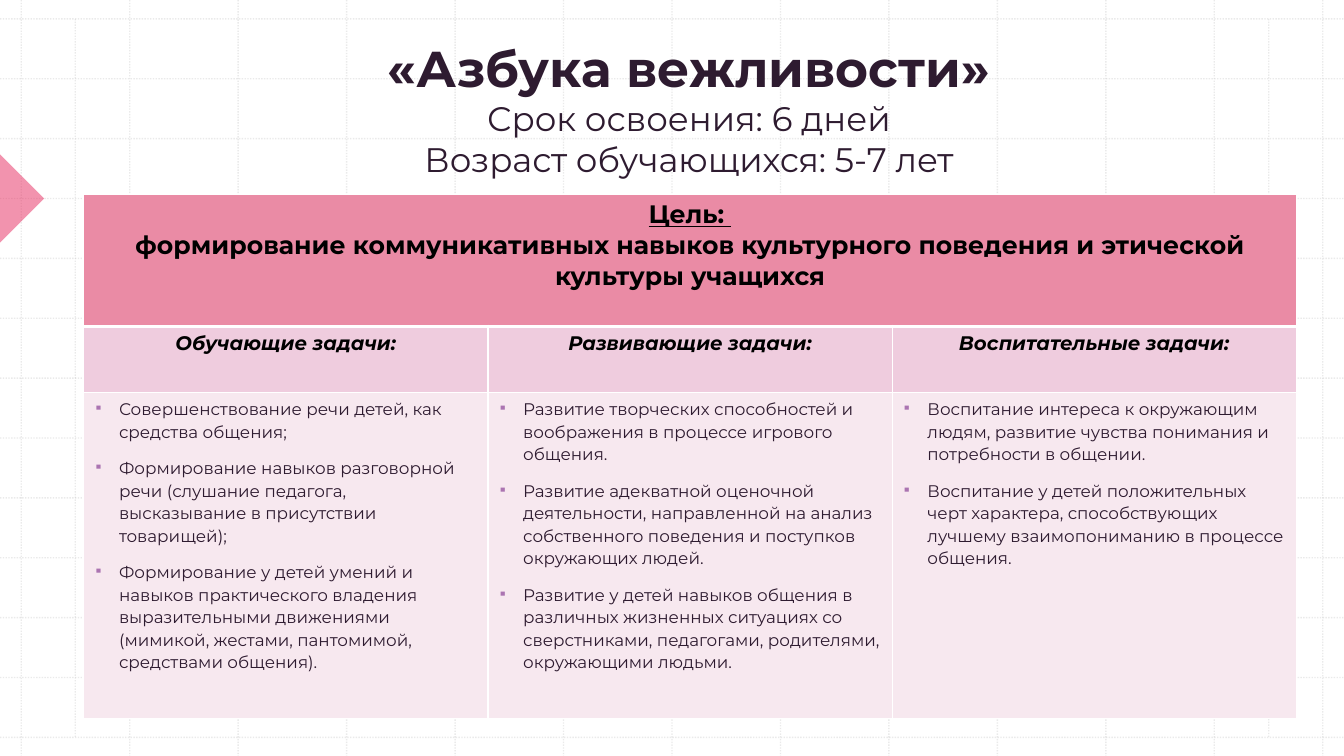
from dataclasses import dataclass

from lxml import etree
from pptx import Presentation
from pptx.dml.color import RGBColor
from pptx.enum.dml import MSO_LINE
from pptx.enum.shapes import MSO_CONNECTOR, MSO_SHAPE
from pptx.enum.text import MSO_ANCHOR, MSO_AUTO_SIZE, PP_ALIGN
from pptx.oxml.ns import qn
from pptx.util import Inches, Pt

WIDTH, HEIGHT = Inches(13.33), Inches(7.5)
DOTS = MSO_LINE.ROUND_DOT
STRAIGHT = MSO_CONNECTOR.STRAIGHT
WEDGE = MSO_SHAPE.RIGHT_TRIANGLE
TOP = MSO_ANCHOR.TOP
FIXED = MSO_AUTO_SIZE.NONE
CENTER, LEFT = PP_ALIGN.CENTER, PP_ALIGN.LEFT


@dataclass(frozen=True)
class Theme:
    face: str = "Montserrat"
    ink: str = "2E1B30"
    black: str = "000000"
    white: str = "FFFFFF"
    grid: str = "BCBCBC"
    wedge: str = "E7295E"
    goal: str = "EA8BA5"
    head: str = "EFCCDE"
    body: str = "F7E8EF"
    mark: str = "AB74B1"
    title: float = 36
    lead: float = 24.3
    large: float = 18
    medium: float = 14
    small: float = 12


@dataclass(frozen=True)
class Box:
    left: float
    top: float
    width: float
    height: float

    def place(self) -> tuple[int, int, int, int]:
        return wide(self.left), high(self.top), wide(self.width), high(self.height)


@dataclass(frozen=True)
class Line:
    text: str
    size: float
    color: str
    bold: bool = False
    slant: bool = False
    under: bool = False
    align: PP_ALIGN = CENTER
    bullet: bool = False


@dataclass(frozen=True)
class Column:
    head: str
    tasks: tuple[str, ...]


THEME = Theme()
TITLE = Box(6.75, 4.93, 89.03, 36.53)
TABLE = Box(6.23, 25.73, 90.23, 69.34)
ARROW = Box(-2.33, 22.13, 4.65, 8.27)
ROWS = (17.47, 8.67, 43.2)
COUNT = 13
RULES = [1.58 + 8.07 * i for i in range(COUNT)]
LEVELS = [2.5 + 7.92 * i for i in range(COUNT)]
MARGINS = (5.6, 94.4)

HEADING = (
    Line("«Азбука вежливости»", THEME.title, THEME.ink, bold=True),
    Line("Срок освоения: 6 дней", THEME.lead, THEME.ink),
    Line("Возраст обучающихся: 5-7 лет", THEME.lead, THEME.ink),
)
GOAL = (
    Line("Цель: ", THEME.large, THEME.black, bold=True, under=True),
    Line("формирование коммуникативных навыков культурного поведения и этической культуры учащихся",
         THEME.large, THEME.black, bold=True),
)
COLUMNS = (
    Column("Обучающие задачи:", (
        "Совершенствование речи детей, как средства общения;",
        "Формирование навыков разговорной речи (слушание педагога, высказывание в присутствии товарищей);",
        "Формирование у детей умений и навыков практического владения выразительными движениями "
        "(мимикой, жестами, пантомимой, средствами общения).",
    )),
    Column("Развивающие задачи:", (
        "Развитие творческих способностей и воображения в процессе игрового общения.",
        "Развитие адекватной оценочной деятельности, направленной на анализ собственного поведения "
        "и поступков окружающих людей.",
        "Развитие у детей навыков общения в различных жизненных ситуациях со сверстниками, "
        "педагогами, родителями, окружающими людьми.",
    )),
    Column("Воспитательные задачи:", (
        "Воспитание интереса к окружающим людям, развитие чувства понимания и потребности в общении.",
        "Воспитание у детей положительных черт характера, способствующих лучшему взаимопониманию "
        "в процессе общения.",
    )),
)


def wide(share: float) -> int:
    return round(WIDTH * share / 100)


def high(share: float) -> int:
    return round(HEIGHT * share / 100)


def rgb(color: str) -> RGBColor:
    return RGBColor.from_string(color)


def fade(props, share: int) -> None:
    for color in props.iter(qn("a:srgbClr")):
        etree.SubElement(color, qn("a:alpha"), val=str(share * 1000))


def rule(slide, x1: float, y1: float, x2: float, y2: float) -> None:
    link = slide.shapes.add_connector(STRAIGHT, wide(x1), high(y1), wide(x2), high(y2))
    link.line.color.rgb = rgb(THEME.grid)
    link.line.width = Pt(1)
    link.line.dash_style = DOTS
    props = link.element.spPr
    fade(props, 30)
    etree.SubElement(props, qn("a:effectLst"))


def mark(para) -> None:
    props = para._p.get_or_add_pPr()
    props.set("marL", str(Inches(0.25)))
    props.set("indent", str(-Inches(0.25)))
    color = etree.SubElement(props, qn("a:buClr"))
    etree.SubElement(color, qn("a:srgbClr"), val=THEME.mark)
    etree.SubElement(props, qn("a:buSzPct"), val="75000")
    etree.SubElement(props, qn("a:buChar"), char="▪")
    para.line_spacing = 1.1
    para.space_before = Pt(10)


def write(frame, lines: tuple[Line, ...]) -> None:
    for i, line in enumerate(lines):
        para = frame.add_paragraph() if i else frame.paragraphs[0]
        para.text = line.text
        para.alignment = line.align
        if line.bullet:
            mark(para)
        font = para.font
        font.name, font.size = THEME.face, Pt(line.size)
        font.bold, font.italic, font.underline = line.bold, line.slant, line.under
        font.color.rgb = rgb(line.color)


def edge(cell, side: str, width: float) -> None:
    props = cell._tc.get_or_add_tcPr()
    line = etree.SubElement(props, qn(f"a:ln{side}"), w=str(Pt(width)))
    fill = etree.SubElement(line, qn("a:solidFill"))
    etree.SubElement(fill, qn("a:srgbClr"), val=THEME.white)


def paint(table) -> None:
    for r, color in enumerate((THEME.goal, THEME.head, THEME.body)):
        for cell in table.rows[r].cells:
            sides = {"L": 1, "R": 1, "T": 3 if r == 1 else 1, "B": 3 if r == 0 else 1}
            for side, width in sides.items():
                edge(cell, side, width)
            cell.fill.solid()
            cell.fill.fore_color.rgb = rgb(color)


def chart(slide) -> None:
    table = slide.shapes.add_table(len(ROWS), len(COLUMNS), *TABLE.place()).table
    for row, share in zip(table.rows, ROWS):
        row.height = high(share)
    paint(table)
    table.cell(0, 0).merge(table.cell(0, len(COLUMNS) - 1))
    write(table.cell(0, 0).text_frame, GOAL)
    for c, column in enumerate(COLUMNS):
        head = Line(column.head, THEME.medium, THEME.black, bold=True, slant=True)
        tasks = tuple(Line(task, THEME.small, THEME.ink, align=LEFT, bullet=True)
                      for task in column.tasks)
        write(table.cell(1, c).text_frame, (head,))
        write(table.cell(2, c).text_frame, tasks)


def back(slide) -> None:
    for x in RULES:
        rule(slide, x, 0, x, 100)
    for y in LEVELS:
        rule(slide, 0, y, 100, y)
    for x in MARGINS:
        rule(slide, x, LEVELS[0], x, LEVELS[-1])
    wedge = slide.shapes.add_shape(WEDGE, *ARROW.place())
    wedge.rotation = 225
    wedge.shadow.inherit = False
    wedge.fill.solid()
    wedge.fill.fore_color.rgb = rgb(THEME.wedge)
    fade(wedge.element.spPr, 50)
    wedge.line.fill.background()


def head(slide) -> None:
    title = slide.shapes.title
    title.left, title.top, title.width, title.height = TITLE.place()
    frame = title.text_frame
    frame.auto_size, frame.vertical_anchor = FIXED, TOP
    frame.margin_top = 0
    write(frame, HEADING)
    title.element.getparent().append(title.element)


def main() -> None:
    deck = Presentation()
    deck.slide_width, deck.slide_height = WIDTH, HEIGHT
    slide = deck.slides.add_slide(deck.slide_layouts[5])
    back(slide)
    head(slide)
    chart(slide)
    deck.save("out.pptx")


if __name__ == "__main__":
    main()
